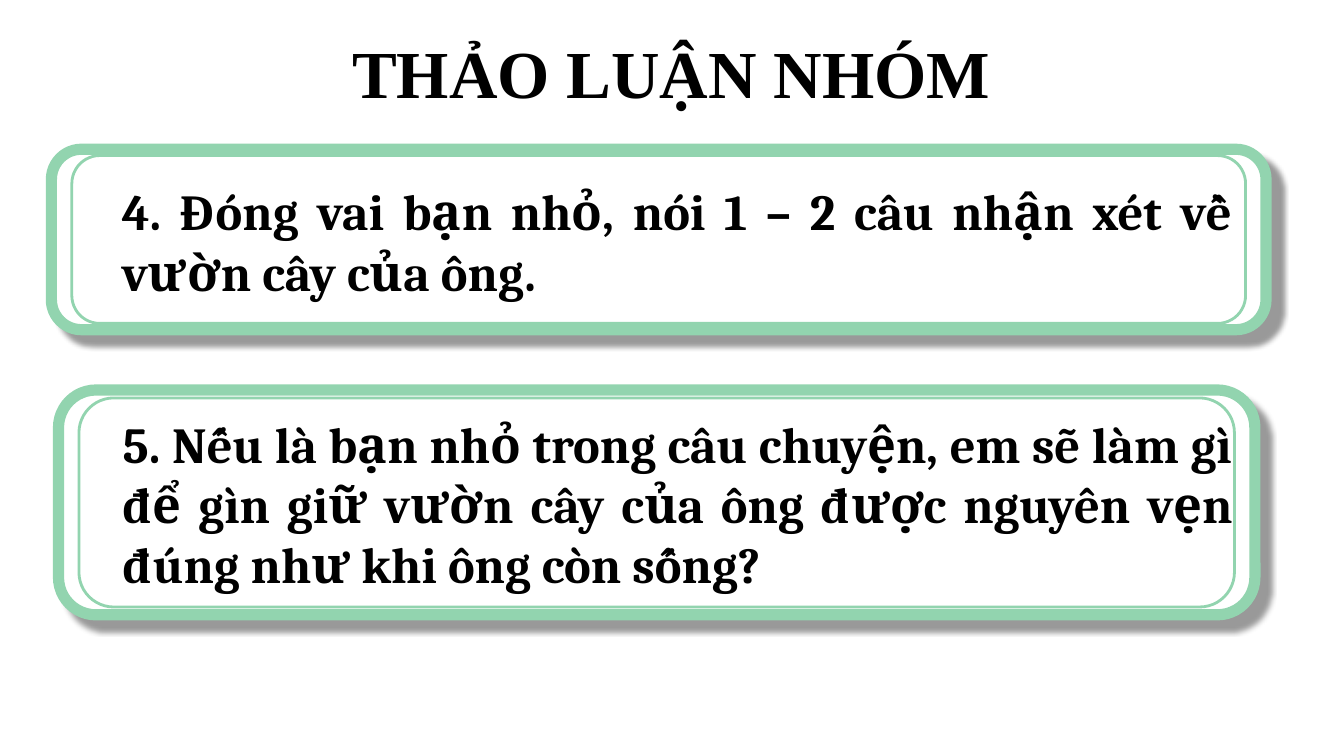
from dataclasses import dataclass

from lxml import etree
from pptx import Presentation
from pptx.dml.color import RGBColor
from pptx.enum.shapes import MSO_SHAPE
from pptx.enum.text import MSO_AUTO_SIZE, PP_ALIGN
from pptx.oxml.ns import qn
from pptx.util import Pt

ROUND_RECT = MSO_SHAPE.ROUNDED_RECTANGLE
GROW = MSO_AUTO_SIZE.SHAPE_TO_FIT_TEXT
CENTER, JUSTIFY = PP_ALIGN.CENTER, PP_ALIGN.JUSTIFY


@dataclass(frozen=True)
class Theme:
    """Colours, fonts and sizes of the slide."""
    paper: RGBColor = RGBColor(0xFF, 0xFF, 0xFF)
    ink: RGBColor = RGBColor(0x00, 0x00, 0x00)
    frame: RGBColor = RGBColor(0x92, 0xD4, 0xAF)
    shadow: str = "000000"
    title_font: str = "Times New Roman"
    body_font: str = "Cambria"
    title_size: int = 48
    body_size: int = 36
    outer_line: int = 8
    inner_line: int = 2


THEME = Theme()


def add_shadow(sp):
    """Cast a soft shadow to the lower right of a shape."""
    effects = sp._element.spPr.find(qn("a:effectLst"))
    shadow = etree.SubElement(effects, qn("a:outerShdw"), blurRad=str(Pt(4)),
                              dist=str(Pt(11)), dir="2700000", algn="tl", rotWithShape="0")
    color = etree.SubElement(shadow, qn("a:srgbClr"), val=THEME.shadow)
    etree.SubElement(color, qn("a:alpha"), val="40000")


def add_frame(shapes, x, y, w, h, line):
    """Draw one rounded frame and return it."""
    sp = shapes.add_shape(ROUND_RECT, Pt(x), Pt(y), Pt(w), Pt(h))
    sp.shadow.inherit = False
    sp.fill.solid()
    sp.fill.fore_color.rgb = THEME.paper
    sp.line.color.rgb = THEME.frame
    sp.line.width = Pt(line)
    return sp


def add_text(shapes, x, y, w, h, text, font, size, align):
    """Write one bold paragraph in a text box."""
    tf = shapes.add_textbox(Pt(x), Pt(y), Pt(w), Pt(h)).text_frame
    tf.word_wrap = True
    tf.auto_size = GROW
    p = tf.paragraphs[0]
    p.text = text
    p.alignment = align
    r = p.runs[0]
    r.font.name = font
    r.font.size = Pt(size)
    r.font.bold = True
    r.font.color.rgb = THEME.ink


def add_title(slide, x, y, w, h, text):
    """Place the slide heading."""
    add_text(slide.shapes, x, y, w, h, text, THEME.title_font, THEME.title_size, CENTER)


def add_card(slide, x, y, w, h, text, lines, indent):
    """Place a double-framed question card as a group."""
    shapes = slide.shapes.add_group_shape().shapes
    add_shadow(add_frame(shapes, x, y, w, h, THEME.outer_line))
    dx, dy = 14.6, h * 0.035
    add_frame(shapes, x + dx, y + dy, w - 2 * dx, h - 2 * dy, THEME.inner_line)
    text_h = 44 * lines + 6.4
    add_text(shapes, x + indent, y + (h - text_h) / 2 + 1.5, 807, text_h,
             text, THEME.body_font, THEME.body_size, JUSTIFY)


def main():
    """Build and save the slide."""
    prs = Presentation()
    prs.slide_width, prs.slide_height = Pt(960), Pt(540)
    slide = prs.slides.add_slide(prs.slide_layouts[6])
    add_card(slide, 36.7, 106.6, 867.6, 128.9,
             "4. Đóng vai bạn nhỏ, nói 1 – 2 câu nhận xét về vườn cây của ông.", 2, 43.2)
    add_card(slide, 41.8, 278.6, 854.6, 160.6,
             "5. Nếu là bạn nhỏ trong câu chuyện, em sẽ làm gì để gìn giữ vườn cây "
             "của ông được nguyên vẹn đúng như khi ông còn sống?", 3, 38.8)
    add_title(slide, 174.2, 18.7, 610.6, 65.5, "THẢO LUẬN NHÓM")
    prs.save("out.pptx")


if __name__ == "__main__":
    main()
